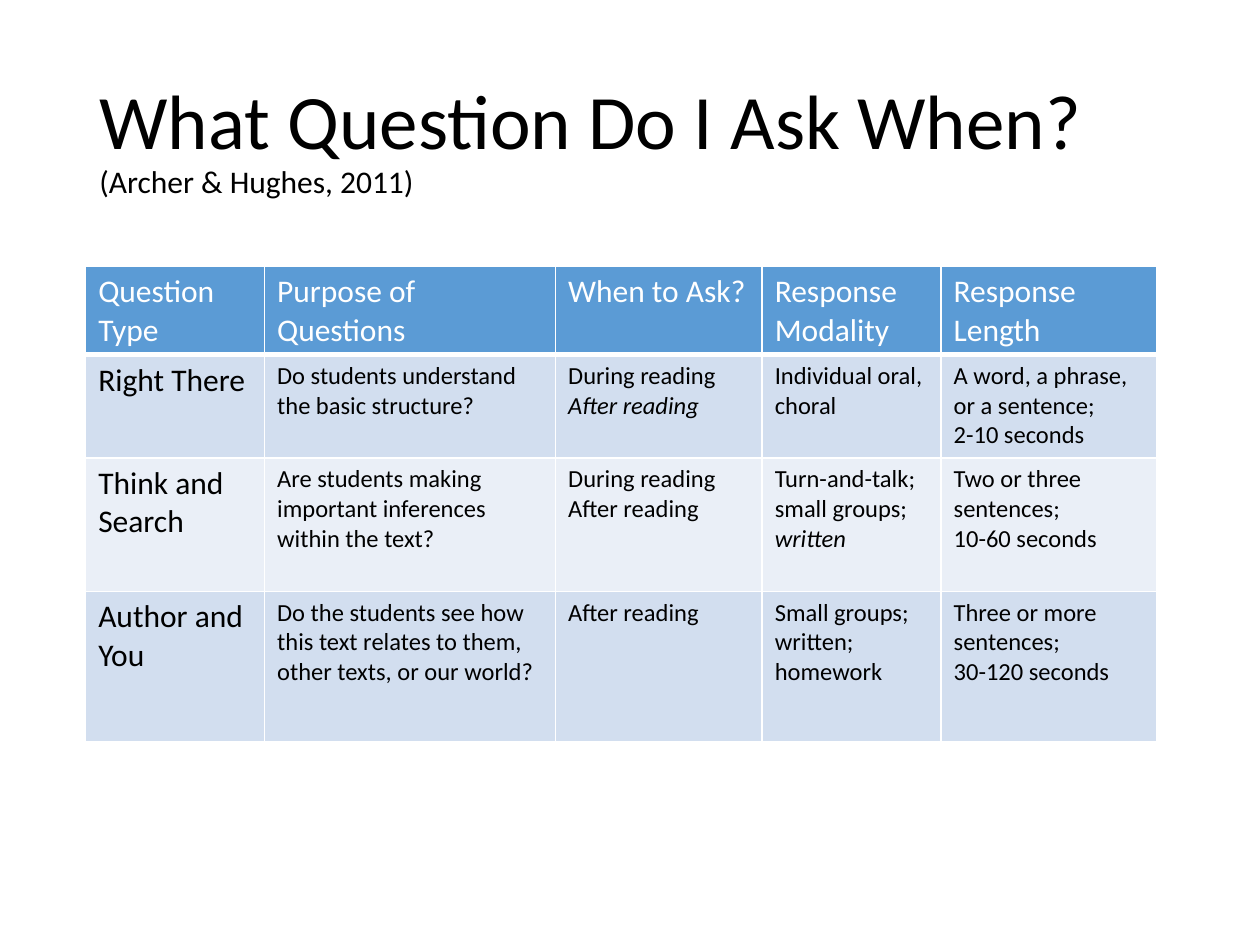
"""Build a slide with a table that matches question types to their use."""
from lxml import etree
from pptx import Presentation
from pptx import util as u
from pptx.dml.color import RGBColor
from pptx.enum import text
from pptx.oxml.ns import qn

FONT = "Calibri"
WHITE = RGBColor(0xFF, 0xFF, 0xFF)
BLACK = RGBColor(0x00, 0x00, 0x00)
HEADER_BLUE = RGBColor(0x5B, 0x9B, 0xD5)
BAND_DARK = RGBColor(0xD2, 0xDE, 0xEF)
BAND_LIGHT = RGBColor(0xEA, 0xEF, 0xF7)

WIDTH, HEIGHT = u.Inches(10), u.Inches(7.5)
COLUMN_WIDTHS = [1.42, 2.31, 1.64, 1.42, 1.71]
ROW_HEIGHTS = [0.7, 0.82, 1.06, 1.19]
ROWS = [
    ["Question Type", "Purpose of Questions", "When to Ask?",
     "Response Modality", "Response Length"],
    ["Right There", "Do students understand the basic structure?",
     "During reading\n*After reading*", "Individual oral, choral",
     "A word, a phrase, or a sentence;\n2-10 seconds"],
    ["Think and Search",
     "Are students making important inferences within the text?",
     "During reading\nAfter reading",
     "Turn-and-talk; small groups; *written*",
     "Two or three sentences;\n10-60 seconds"],
    ["Author and You",
     "Do the students see how this text relates to them, other texts, or our world?",
     "After reading", "Small groups; written; homework",
     "Three or more sentences;\n30-120 seconds"],
]


def add_run(paragraph, words, size=14, color=BLACK, italic=False):
    run = paragraph.add_run()
    run.text = words
    font = run.font
    font.name, font.size = FONT, u.Pt(size)
    font.bold, font.italic = False, italic
    font.color.rgb = color


def write_lines(frame, content, **style):
    for index, line in enumerate(content.split("\n")):
        paragraph = frame.add_paragraph() if index else frame.paragraphs[0]
        for part, words in enumerate(line.split("*")):
            if words:
                add_run(paragraph, words, italic=part % 2 == 1, **style)


def set_borders(cell, color=WHITE, bottom=1):
    properties = cell._tc.get_or_add_tcPr()
    for side, points in (("L", 1), ("R", 1), ("T", 1), ("B", bottom)):
        line = etree.SubElement(properties, qn(f"a:ln{side}"), w=str(u.Pt(points)))
        fill = etree.SubElement(line, qn("a:solidFill"))
        etree.SubElement(fill, qn("a:srgbClr"), val=str(color))


def add_title(slide):
    box = slide.shapes.add_textbox(
        int(WIDTH * 0.069), int(HEIGHT * 0.053), int(WIDTH * 0.862), int(HEIGHT * 0.193))
    frame = box.text_frame
    frame.word_wrap = True
    frame.vertical_anchor = text.MSO_ANCHOR.MIDDLE
    paragraph = frame.paragraphs[0]
    paragraph.line_spacing = 0.9
    add_run(paragraph, "What Question Do I Ask When? ", size=44)
    add_run(paragraph, "(Archer & Hughes, 2011)", size=18)


def add_question_table(slide):
    frame = slide.shapes.add_table(
        len(ROWS), len(COLUMN_WIDTHS), int(WIDTH * 0.068), int(HEIGHT * 0.282),
        u.Inches(sum(COLUMN_WIDTHS)), u.Inches(sum(ROW_HEIGHTS)))
    table = frame.table
    for column, width in zip(table.columns, COLUMN_WIDTHS):
        column.width = u.Inches(width)
    for row, height in zip(table.rows, ROW_HEIGHTS):
        row.height = u.Inches(height)
    for row, contents in enumerate(ROWS):
        header = row == 0
        band = BAND_DARK if row % 2 else BAND_LIGHT
        for column, content in enumerate(contents):
            cell = table.cell(row, column)
            set_borders(cell, bottom=3 if header else 1)
            cell.fill.solid()
            cell.fill.fore_color.rgb = HEADER_BLUE if header else band
            write_lines(cell.text_frame, content,
                        size=18 if header or column == 0 else 14,
                        color=WHITE if header else BLACK)


def main():
    presentation = Presentation()
    presentation.slide_width, presentation.slide_height = WIDTH, HEIGHT
    slide = presentation.slides.add_slide(presentation.slide_layouts[6])
    add_title(slide)
    add_question_table(slide)
    presentation.save("out.pptx")


if __name__ == "__main__":
    main()
